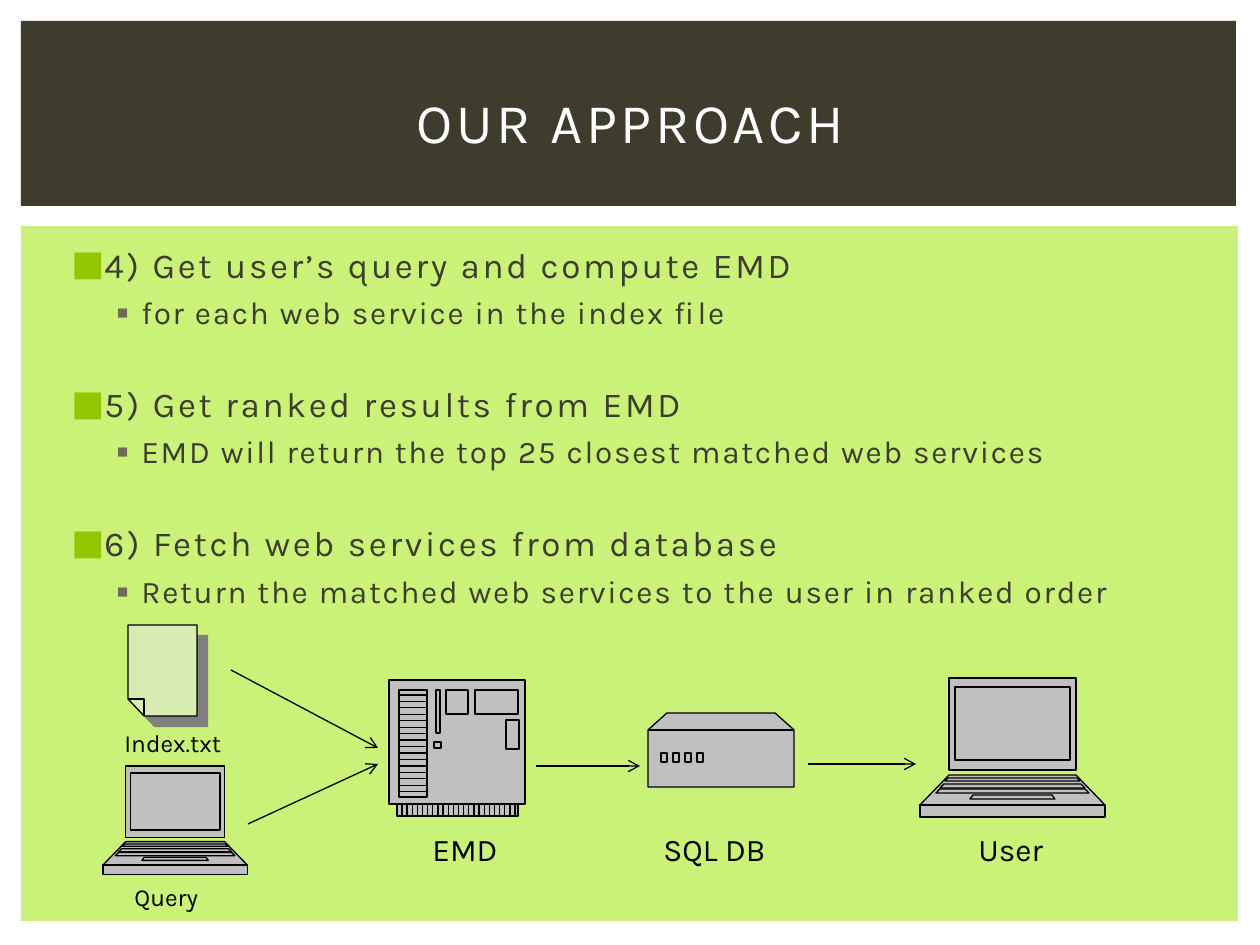
import dataclasses

import lxml.etree
import pptx
import pptx.dml.color
import pptx.enum.shapes
import pptx.enum.text
import pptx.oxml
import pptx.oxml.ns
import pptx.util


@dataclasses.dataclass(frozen=True)
class Theme:
    font: str = "Karla"
    dark: str = "3E3D2D"
    lime: str = "CAF278"
    white: str = "FFFFFF"
    black: str = "000000"
    gray: str = "C0C0C0"
    paper: str = "D8EBB3"
    paper_shadow: str = "808080"
    step_bullet: str = "94C600"
    detail_bullet: str = "71685A"
    title_size: int = 32
    step_size: int = 20
    detail_size: int = 18
    label_size: int = 18
    small_label_size: int = 14
    outline: float = 0.75


THEME = Theme()
PX = 914400 / 126

TITLE = "OUR APPROACH"
STEPS = [
    ("4) Get user’s query and compute EMD", "for each web service in the index file"),
    ("5) Get ranked results from EMD", "EMD will return the top 25 closest matched web services"),
    ("6) Fetch web services from database", "Return the matched web services to the user in ranked order"),
]
LABELS = [
    ("Index.txt", (112, 722, 158, 43), THEME.small_label_size),
    ("Query", (122, 876, 179, 43), THEME.small_label_size),
    ("EMD", (420, 824, 126, 50), THEME.label_size),
    ("SQL DB", (651, 824, 147, 50), THEME.label_size),
    ("User", (966, 824, 116, 50), THEME.label_size),
]
PANELS = [((21, 226, 1217, 695), THEME.lime), ((21, 21, 1215, 185), THEME.dark)]
ARROWS = [
    (231, 670, 378, 748),
    (248, 824, 378, 764),
    (536, 766, 640, 766),
    (808, 764, 916, 764),
]


def rect(left, top, right, bottom):
    return [(left, top), (right, top), (right, bottom), (left, bottom), (left, top)]


def trapezoid(width, top_inset, top, bottom_inset, bottom):
    return [
        (top_inset, top),
        (bottom_inset, bottom),
        (width - bottom_inset, bottom),
        (width - top_inset, top),
        (top_inset, top),
    ]


LAPTOP_WIDTH = 185
LAPTOP_BODY = [
    trapezoid(LAPTOP_WIDTH, *part)
    for part in [(29, 0, 29, 92), (29, 97, 0, 127), (0, 127, 0, 139)]
]
LAPTOP_DETAILS = [
    trapezoid(LAPTOP_WIDTH, *part)
    for part in [
        (35, 9, 35, 82),
        (28, 100, 25, 103),
        (24, 106, 20, 110),
        (20, 111, 16, 115),
        (53, 117, 50, 121),
    ]
]
SERVER_BODY = [
    [(0, 0), (136, 0), (136, 124), (129, 124), (129, 136), (8, 136), (8, 124), (0, 124), (0, 0)]
]
SERVER_DETAILS = (
    [rect(*slot) for slot in [
        (10, 10, 38, 117),
        (47, 10, 51, 53),
        (45, 62, 52, 68),
        (57, 10, 79, 34),
        (86, 10, 129, 34),
        (117, 40, 130, 69),
    ]]
    + [[(8, 124), (129, 124)]]
    + [[(10, 15 + 6.45 * row), (38, 15 + 6.45 * row)] for row in range(16)]
    + [[(13 + 5.14 * foot, 124), (13 + 5.14 * foot, 136)] for foot in range(23)]
)
DATABASE_BODY = [[(0, 17), (19, 0), (127, 0), (146, 17), (146, 74), (0, 74), (0, 17)]]
DATABASE_DETAILS = [[(0, 17), (146, 17)]] + [
    rect(13 + 12 * light, 40, 19 + 12 * light, 49) for light in range(4)
]
PAGE_BODY = [[(0, 0), (69, 0), (69, 91), (16, 91), (0, 74), (0, 0)]]
PAGE_FOLD = [[(0, 74), (16, 74), (16, 91)]]

DEVICES = [
    (LAPTOP_BODY, LAPTOP_DETAILS, (103, 766), 0.78),
    (SERVER_BODY, SERVER_DETAILS, (389, 680), 1),
    (DATABASE_BODY, DATABASE_DETAILS, (648, 713), 1),
    (LAPTOP_BODY, LAPTOP_DETAILS, (920, 678), 1),
]


def px(*lengths):
    return [pptx.util.Emu(round(length * PX)) for length in lengths]


def rgb(color):
    return pptx.dml.color.RGBColor.from_string(color)


def add_xml(parent, tag, **attributes):
    return lxml.etree.SubElement(parent, pptx.oxml.ns.qn(tag), attributes)


def style_run(paragraph, size, color, spacing=0):
    run = paragraph.runs[0]
    run.font.name = THEME.font
    run.font.size = pptx.util.Pt(size)
    run.font.color.rgb = rgb(color)
    if spacing:
        run.font._element.set("spc", str(spacing))


def add_text(slide, text, box, size, color, spacing=0):
    frame = slide.shapes.add_textbox(*px(*box)).text_frame
    frame.word_wrap = True
    frame.text = text
    style_run(frame.paragraphs[0], size, color, spacing)
    return frame


def add_panel(slide, box, color):
    panel = slide.shapes.add_shape(pptx.enum.shapes.MSO_SHAPE.RECTANGLE, *px(*box))
    panel.shadow.inherit = False
    panel.fill.solid()
    panel.fill.fore_color.rgb = rgb(color)
    panel.line.fill.background()


def add_outline(slide, contours, origin, scale=1, fill=None):
    placed = [
        [(round(origin[0] + x * scale, 2), round(origin[1] + y * scale, 2)) for x, y in contour]
        for contour in contours
    ]
    builder = slide.shapes.build_freeform(*px(*placed[0][0]), scale=1)
    for contour in placed:
        builder.move_to(*px(*contour[0]))
        builder.add_line_segments([px(*point) for point in contour[1:]], close=contour[0] == contour[-1])
    outline = builder.convert_to_shape()
    outline.shadow.inherit = False
    outline.line.color.rgb = rgb(THEME.black)
    outline.line.width = pptx.util.Pt(THEME.outline)
    if fill:
        outline.fill.solid()
        outline.fill.fore_color.rgb = rgb(fill)
    else:
        outline.fill.background()
    return outline


def add_bullet(paragraph, symbol, color, margin, hanging):
    properties = paragraph._p.get_or_add_pPr()
    properties.set("marL", str(px(margin)[0]))
    properties.set("indent", str(-px(hanging)[0]))
    add_xml(add_xml(properties, "a:buClr"), "a:srgbClr", val=color)
    add_xml(properties, "a:buFont", typeface=THEME.font)
    add_xml(properties, "a:buChar", char=symbol)


def add_steps(slide):
    frame = add_text(slide, STEPS[0][0], (53, 237, 1158, 393), THEME.step_size, THEME.dark, 150)
    for index, (step, detail) in enumerate(STEPS):
        heading = frame.add_paragraph() if index else frame.paragraphs[0]
        heading.text = step
        heading.space_before = pptx.util.Pt(29.5 if index else 4.5)
        style_run(heading, THEME.step_size, THEME.dark, 150)
        add_bullet(heading, "■", THEME.step_bullet, 38, 32)
        explanation = frame.add_paragraph()
        explanation.text = detail
        explanation.level = 1
        explanation.space_before = pptx.util.Pt(4.5)
        style_run(explanation, THEME.detail_size, THEME.dark, 100)
        add_bullet(explanation, "▪", THEME.detail_bullet, 76, 25)


def add_page(slide):
    page = add_outline(slide, PAGE_BODY, (128, 625), fill=THEME.paper)
    effects = page._element.spPr.find(pptx.oxml.ns.qn("a:effectLst"))
    shadow = add_xml(effects, "a:outerShdw", dist=str(pptx.util.Pt(8.5)), dir="2700000", algn="ctr", rotWithShape="0")
    add_xml(shadow, "a:srgbClr", val=THEME.paper_shadow)
    add_outline(slide, PAGE_FOLD, (128, 625))


def add_arrow(slide, ends):
    arrow = slide.shapes.add_connector(pptx.enum.shapes.MSO_CONNECTOR.STRAIGHT, *px(*ends))
    arrow.line.color.rgb = rgb(THEME.black)
    arrow.line.width = pptx.util.Pt(THEME.outline)
    add_xml(arrow.line._get_or_add_ln(), "a:tailEnd", type="arrow")
    add_xml(arrow._element.spPr, "a:effectLst")


def main():
    deck = pptx.Presentation()
    deck.slide_width, deck.slide_height = px(1260, 945)
    slide = deck.slides.add_slide(deck.slide_layouts[6])
    for box, color in PANELS:
        add_panel(slide, box, color)
    add_steps(slide)
    title = add_text(slide, TITLE, (53, 49, 1155, 145), THEME.title_size, THEME.white, 200)
    title.vertical_anchor = pptx.enum.text.MSO_ANCHOR.MIDDLE
    title.paragraphs[0].alignment = pptx.enum.text.PP_ALIGN.CENTER
    add_page(slide)
    for body, details, origin, scale in DEVICES:
        add_outline(slide, body, origin, scale, THEME.gray)
        add_outline(slide, details, origin, scale)
    for label, box, size in LABELS:
        add_text(slide, label, box, size, THEME.black)
    for ends in ARROWS:
        add_arrow(slide, ends)
    deck.save("out.pptx")


if __name__ == "__main__":
    main()
